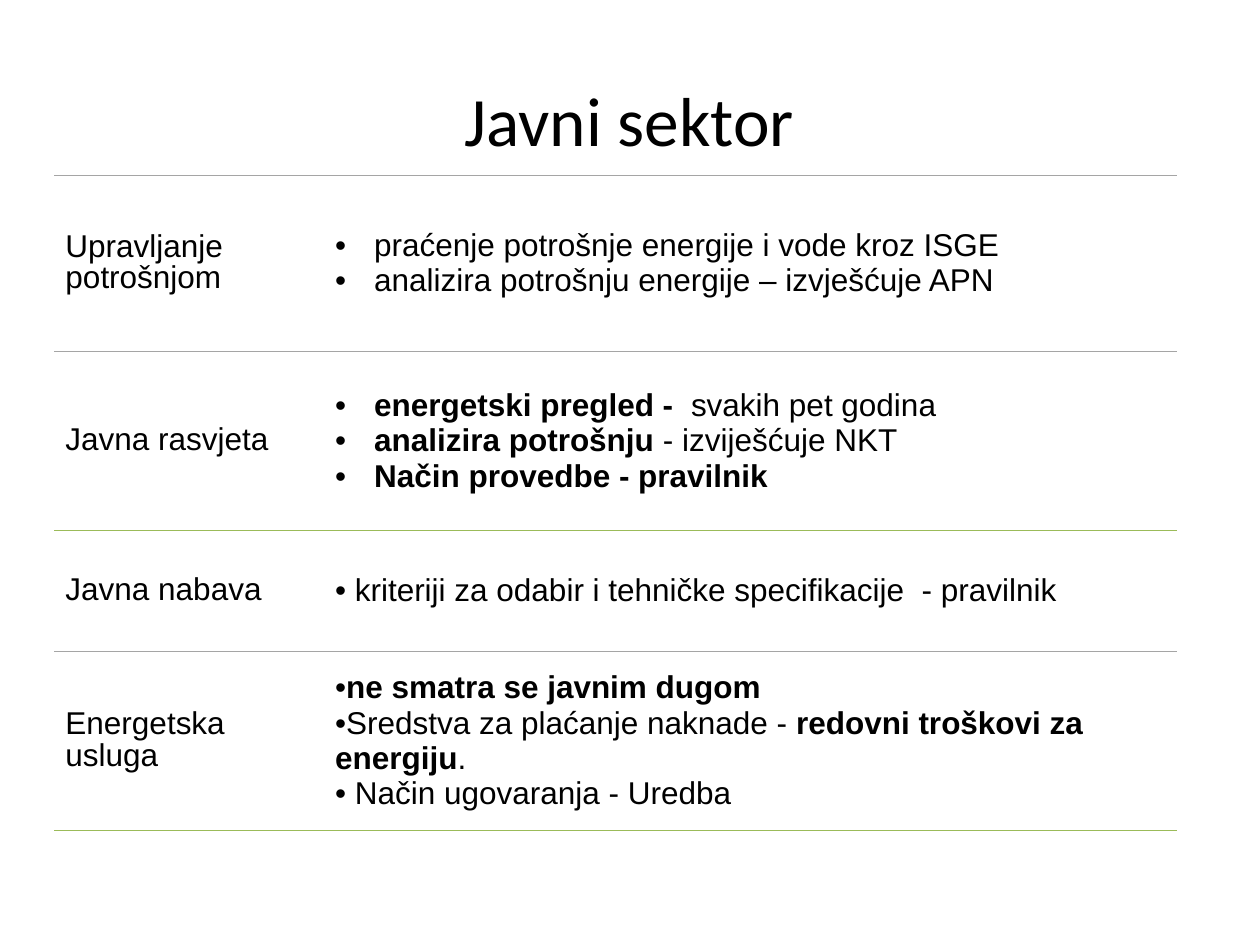
"""Build the public sector slide: a title above a ruled two-column table."""
from lxml import etree
from pptx import Presentation
from pptx.dml.color import RGBColor
from pptx.enum.text import MSO_ANCHOR, MSO_AUTO_SIZE, PP_ALIGN
from pptx.oxml.ns import qn
from pptx.util import Inches, Pt

MIDDLE, CENTER, NO_FIT = MSO_ANCHOR.MIDDLE, PP_ALIGN.CENTER, MSO_AUTO_SIZE.NONE

COLORS = {"text": "000000", "cell": "FFFFFF", "grey": "A5A5A5", "green": "9BBB59"}
TITLE = "Javni sektor"
COLUMNS = (2.13, 6.78)
HANGING = 0.31
ROWS = [
    {"topic": "Upravljanje potrošnjom", "height": 1.4, "indent": HANGING, "rules": ("grey", "grey"),
     "points": [[("praćenje potrošnje energije i vode kroz ISGE", False)],
                [("analizira potrošnju energije – izvješćuje APN", False)]]},
    {"topic": "Javna rasvjeta", "height": 1.42, "indent": HANGING, "rules": ("grey", "green"),
     "points": [[("energetski pregled - ", True), (" svakih pet godina", False)],
                [("analizira potrošnju ", True), ("- izviješćuje NKT", False)],
                [("Način provedbe - pravilnik", True)]]},
    {"topic": "Javna nabava", "height": 0.96, "indent": 0, "rules": ("green", "grey"),
     "points": [[(" kriteriji za odabir i tehničke specifikacije  - pravilnik", False)]]},
    {"topic": "Energetska usluga", "height": 1.42, "indent": 0, "rules": ("grey", "green"),
     "points": [[("ne smatra se javnim dugom", True)],
                [("Sredstva za plaćanje naknade - ", False),
                 ("redovni troškovi za energiju", True), (".", False)],
                [(" Način ugovaranja - Uredba", False)]]},
]


def add_run(p, text, size=18, font="Arial", bold=False):
    r = p.add_run()
    r.text = text
    r.font.size, r.font.name, r.font.bold = Pt(size), font, bold
    r.font.color.rgb = RGBColor.from_string(COLORS["text"])


def set_bullet(p, indent):
    pPr = p._p.get_or_add_pPr()
    pPr.set("marL", str(Inches(indent)))
    pPr.set("indent", str(-Inches(indent)))
    etree.SubElement(pPr, qn("a:buFont")).set("typeface", "Arial")
    etree.SubElement(pPr, qn("a:buChar")).set("char", "•")


def set_borders(cell, top, bottom):
    tcPr = cell._tc.get_or_add_tcPr()
    sides = (("a:lnL", None), ("a:lnR", None), ("a:lnT", top), ("a:lnB", bottom))
    for i, (tag, color) in enumerate(sides):
        ln = etree.Element(qn(tag), w=str(Pt(0.25)))
        fill = etree.SubElement(ln, qn("a:solidFill" if color else "a:noFill"))
        if color:
            etree.SubElement(fill, qn("a:srgbClr")).set("val", COLORS[color])
        tcPr.insert(i, ln)


def format_cell(cell, rules):
    cell.vertical_anchor = MIDDLE
    cell.fill.solid()
    cell.fill.fore_color.rgb = RGBColor.from_string(COLORS["cell"])
    set_borders(cell, *rules)


def add_title(s):
    sp = s.shapes.title
    sp.left, sp.top, sp.width, sp.height = map(Inches, (0.27, 0.76, 9.45, 0.36))
    tf = sp.text_frame
    tf.auto_size, tf.vertical_anchor = NO_FIT, MIDDLE
    p = tf.paragraphs[0]
    p.alignment = CENTER
    add_run(p, TITLE, size=39.6, font="Calibri")


def add_sector_table(s):
    height = sum(row["height"] for row in ROWS)
    box = map(Inches, (0.43, 1.39, sum(COLUMNS), height))
    table = s.shapes.add_table(len(ROWS), len(COLUMNS), *box).table
    table.first_row = table.horz_banding = False
    for column, width in zip(table.columns, COLUMNS):
        column.width = Inches(width)
    for i, row in enumerate(ROWS):
        table.rows[i].height = Inches(row["height"])
        topic, points = table.cell(i, 0), table.cell(i, 1)
        for cell in (topic, points):
            format_cell(cell, row["rules"])
        topic.margin_left = topic.margin_right = Inches(0.09)
        topic.margin_top = topic.margin_bottom = Inches(0.04)
        p = topic.text_frame.paragraphs[0]
        p.line_spacing, p.space_before = 0.9, Pt(2)
        add_run(p, row["topic"])
        tf = points.text_frame
        for j, runs in enumerate(row["points"]):
            p = tf.add_paragraph() if j else tf.paragraphs[0]
            set_bullet(p, row["indent"])
            for text, bold in runs:
                add_run(p, text, bold=bold)


def main():
    prs = Presentation()
    prs.slide_width, prs.slide_height = Inches(10), Inches(7.5)
    s = prs.slides.add_slide(prs.slide_layouts[5])
    add_title(s)
    add_sector_table(s)
    prs.save("out.pptx")


if __name__ == "__main__":
    main()
